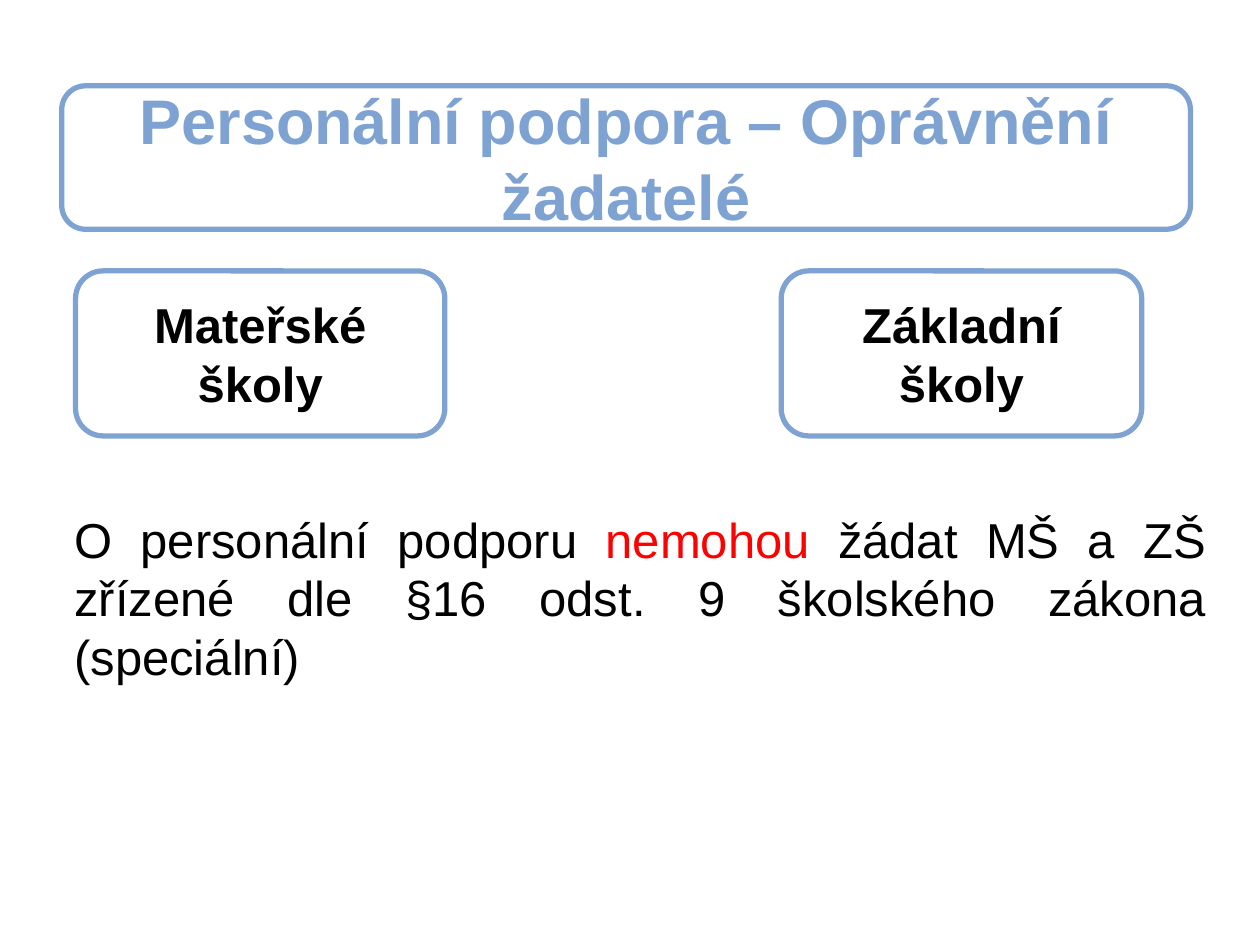
from pptx import Presentation
from pptx.dml.color import RGBColor
from pptx.enum.shapes import MSO_SHAPE as Shape
from pptx.enum.text import MSO_ANCHOR as Anchor, MSO_AUTO_SIZE as AutoSize, PP_ALIGN as Align
from pptx.util import Pt
from lxml.etree import SubElement
from pptx.oxml.ns import qn

BLUE = RGBColor(0x7E, 0xA2, 0xD1)
WHITE = RGBColor(0xFF, 0xFF, 0xFF)
BLACK = RGBColor(0, 0, 0)
RED = RGBColor(0xFF, 0, 0)

# Content: runs are (text, colour)
HEADING = [("Personální podpora – Oprávnění žadatelé", BLUE)]
RULE = [
    ("O personální podporu ", BLACK),
    ("nemohou", RED),
    (" žádat MŠ a ZŠ zřízené dle §16 odst. 9 školského zákona (speciální)", BLACK),
]
# Applicants: (text, left, width)
APPLICANTS = [("Mateřské školy", 43.2, 211), ("Základní školy", 446.4, 206)]

# Layout in points: left, top, width, height
HEADING_BOX = (35.3, 49, 645, 82)
RULE_BOX = (35.3, 287.3, 661, 172.8)
APPLICANT_TOP, APPLICANT_HEIGHT = 154.8, 94.3


def place(placeholder, box):
    placeholder.left, placeholder.top, placeholder.width, placeholder.height = map(Pt, box)


def write(shape, runs, size, bold, align, anchor):
    frame = shape.text_frame
    frame.word_wrap = True
    frame.auto_size = AutoSize.NONE
    frame.vertical_anchor = anchor
    paragraph = frame.paragraphs[0]
    paragraph.alignment = align
    paragraph.space_before = Pt(0)
    for text, colour in runs:
        run = paragraph.add_run()
        run.text = text
        run.font.name = "Arial"
        run.font.size = Pt(size)
        run.font.bold = bold
        run.font.color.rgb = colour
    return paragraph


def add_frame(slide, box):
    frame = slide.shapes.add_shape(Shape.ROUNDED_RECTANGLE, *map(Pt, box))
    frame.shadow.inherit = False
    frame.fill.solid()
    frame.fill.fore_color.rgb = WHITE
    frame.line.color.rgb = BLUE
    frame.line.width = Pt(3)
    return frame


prs = Presentation()
prs.slide_width, prs.slide_height = Pt(720), Pt(540)
slide = prs.slides.add_slide(prs.slide_layouts[1])
heading, rule = slide.placeholders

# Heading inside an open rounded frame
add_frame(slide, HEADING_BOX).fill.background()
place(heading, HEADING_BOX)
write(heading, HEADING, 36, True, Align.CENTER, Anchor.MIDDLE)

# Eligible applicants
for name, left, width in APPLICANTS:
    applicant = add_frame(slide, (left, APPLICANT_TOP, width, APPLICANT_HEIGHT))
    write(applicant, [(name, BLACK)], 28, True, Align.CENTER, Anchor.MIDDLE)

# Exclusion rule, without a bullet
place(rule, RULE_BOX)
rule_paragraph = write(rule, RULE, 28, False, Align.JUSTIFY, Anchor.TOP)
properties = rule_paragraph._p.get_or_add_pPr()
properties.set("marL", "0")
properties.set("indent", "0")
SubElement(properties, qn("a:buNone"))

prs.save("out.pptx")
